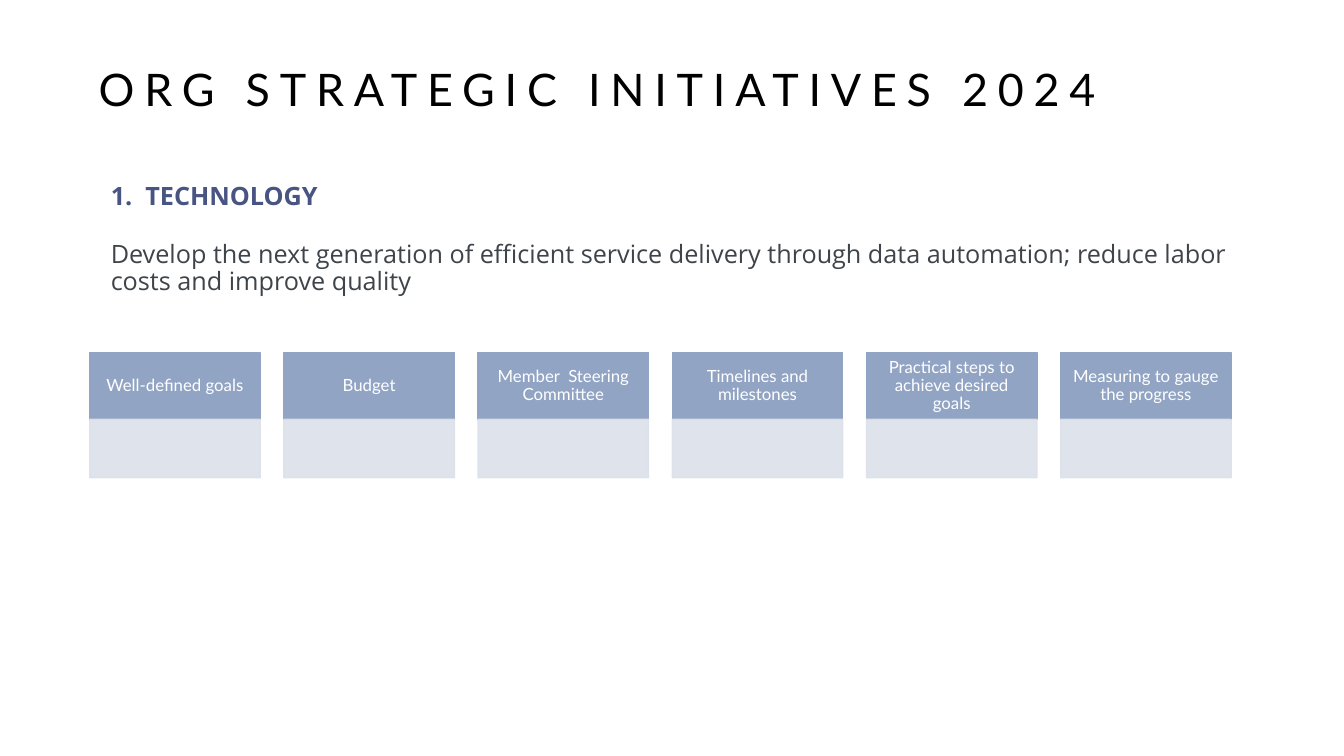
"""Build the strategic initiatives slide with its row of six planning cards."""
from dataclasses import dataclass

from lxml.etree import SubElement
from pptx import Presentation
from pptx.dml.color import RGBColor
from pptx.enum.shapes import MSO_SHAPE
from pptx.enum.text import MSO_ANCHOR, PP_ALIGN
from pptx.oxml.ns import qn
from pptx.util import Inches, Pt

TITLE = "ORG STRATEGIC INITIATIVES 2024"
HEADING = "1.  TECHNOLOGY"
SUMMARY = (
    "Develop the next generation of efficient service delivery through data "
    "automation; reduce labor costs and improve quality"
)
CARDS = [
    "Well-defined goals",
    "Budget",
    "Member  Steering Committee",
    "Timelines and milestones",
    "Practical steps to achieve desired goals",
    "Measuring to gauge the progress",
]


@dataclass(frozen=True)
class Theme:
    """Colours, fonts and type sizes."""
    title: str = "000000"
    heading: str = "485583"
    body: str = "3E4449"
    card: str = "92A4C4"
    panel: str = "DCE0EA"
    card_text: str = "FFFFFF"
    display_font: str = "Lato"
    body_font: str = "Open Sans"
    title_size: int = 32
    body_size: int = 18
    card_size: int = 12
    title_tracking: int = 7
    panel_opacity: int = 90


THEME = Theme()
ROW_LEFT, ROW_TOP, ROW_WIDTH = 0.89, 3.5, 11.32
CARD_WIDTH, CARD_HEIGHT, PANEL_HEIGHT = 1.69, 0.66, 0.58


def style(para, font, size, color, bold=False, spacing=0.9):
    para.line_spacing = spacing
    for span in para.runs:
        span.font.name = font
        span.font.size = Pt(size)
        span.font.bold = bold
        span.font.color.rgb = RGBColor.from_string(color)


def add_text_box(page, left, top, width, height):
    box = page.shapes.add_textbox(
        Inches(left), Inches(top), Inches(width), Inches(height)
    )
    box.text_frame.word_wrap = True
    return box.text_frame


def add_block(page, left, top, height, color, opacity=100):
    block = page.shapes.add_shape(
        MSO_SHAPE.RECTANGLE,
        Inches(left), Inches(top), Inches(CARD_WIDTH), Inches(height),
    )
    block.shadow.inherit = False
    block.fill.solid()
    block.line.width = Pt(1)
    block.line.fill.solid()
    for paint in (block.fill, block.line.fill):
        paint.fore_color.rgb = RGBColor.from_string(color)
    if opacity < 100:
        for tint in block.element.spPr.iter(qn("a:srgbClr")):
            SubElement(tint, qn("a:alpha")).set("val", str(opacity * 1000))
    return block


def add_title(page):
    frame = add_text_box(page, 0.88, 0.43, 11.33, 0.77)
    frame.vertical_anchor = MSO_ANCHOR.BOTTOM
    frame.text = TITLE
    para = frame.paragraphs[0]
    style(para, THEME.display_font, THEME.title_size, THEME.title, spacing=1.2)
    para.runs[0].font._element.set("spc", str(THEME.title_tracking * 100))


def add_initiative(page):
    frame = add_text_box(page, 1, 1.77, 11.62, 1.62)
    frame.text = f"{HEADING}\n{SUMMARY}"
    heading, summary = frame.paragraphs
    style(heading, THEME.body_font, THEME.body_size, THEME.heading, bold=True)
    style(summary, THEME.body_font, THEME.body_size, THEME.body)
    summary.space_before = Pt(22)


def add_cards(page):
    pitch = (ROW_WIDTH - CARD_WIDTH) / (len(CARDS) - 1)
    for index, label in enumerate(CARDS):
        left = ROW_LEFT + index * pitch
        card = add_block(page, left, ROW_TOP, CARD_HEIGHT, THEME.card)
        frame = card.text_frame
        frame.word_wrap = True
        frame.vertical_anchor = MSO_ANCHOR.MIDDLE
        frame.margin_left = frame.margin_right = Inches(0.09)
        frame.text = label
        para = frame.paragraphs[0]
        para.alignment = PP_ALIGN.CENTER
        style(para, THEME.display_font, THEME.card_size, THEME.card_text)
        add_block(page, left, ROW_TOP + CARD_HEIGHT, PANEL_HEIGHT,
                  THEME.panel, THEME.panel_opacity)


def main():
    deck = Presentation()
    deck.slide_width, deck.slide_height = Inches(13.33), Inches(7.5)
    page = deck.slides.add_slide(deck.slide_layouts[6])
    add_title(page)
    add_initiative(page)
    add_cards(page)
    deck.save("out.pptx")


if __name__ == "__main__":
    main()
